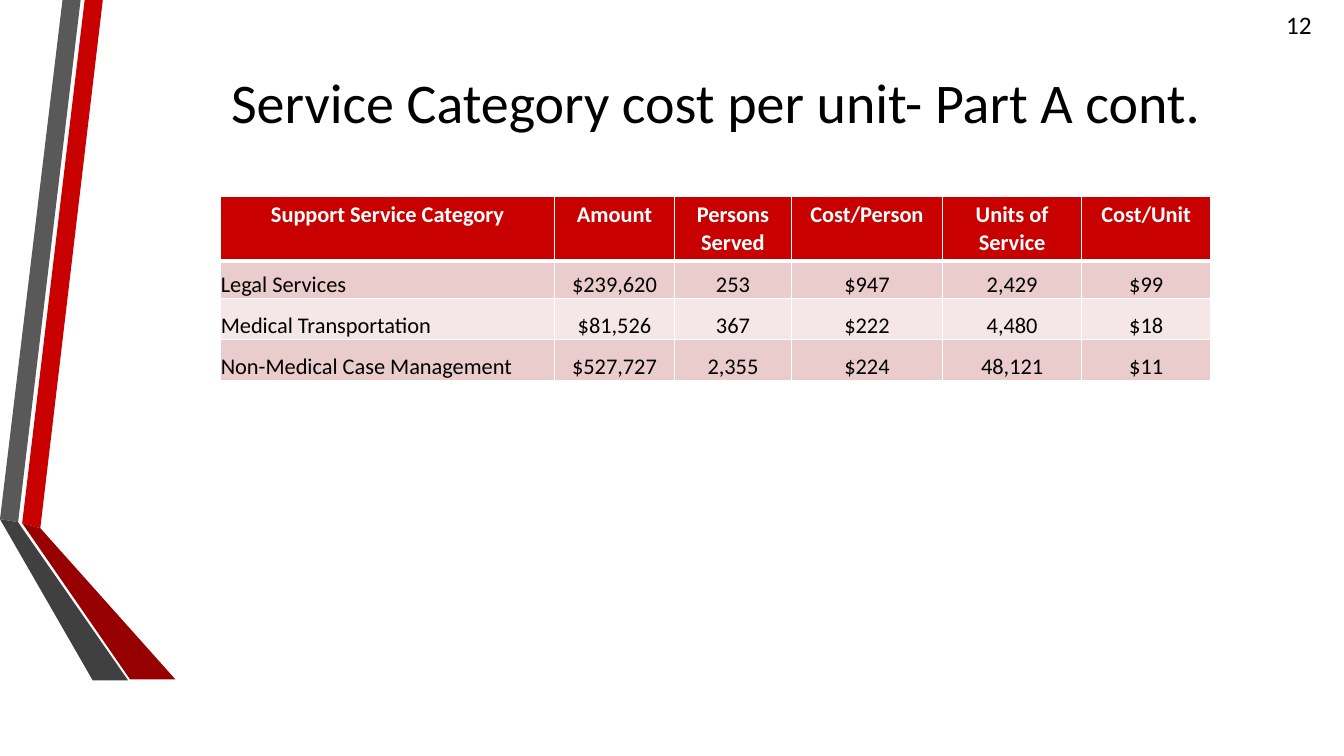
from dataclasses import dataclass

from lxml import etree
from pptx import Presentation
from pptx.dml.color import RGBColor
from pptx.enum.text import MSO_ANCHOR, PP_ALIGN
from pptx.oxml.ns import qn
from pptx.util import Emu, Inches, Pt

LEFT, CENTER = PP_ALIGN.LEFT, PP_ALIGN.CENTER
TOP, MIDDLE, BOTTOM = MSO_ANCHOR.TOP, MSO_ANCHOR.MIDDLE, MSO_ANCHOR.BOTTOM

WIDTH, HEIGHT = Inches(13.33), Inches(7.5)
FONT = "Calibri"
BLACK, WHITE, RED = "000000", "FFFFFF", "C80000"
BANDS = ("EBCCCC", "F5E7E7")


@dataclass(frozen=True)
class Ribbon:
    """A coloured outline; points are percentages of the slide's size."""
    color: str
    points: tuple[tuple[float, float], ...]


@dataclass(frozen=True)
class Column:
    """A table column; width is a percentage of the slide's width."""
    heading: str
    width: float
    values: tuple[str, ...]
    align: PP_ALIGN = CENTER


RIBBONS = (
    Ribbon(RED, ((1.65, 69.2), (3, 69.87), (7.65, 0), (6.3, 0))),
    Ribbon("595959", ((6, 0), (4.65, 0), (0, 68.67), (1.35, 69.07))),
    Ribbon("960000", ((1.65, 69.2), (9.68, 89.87), (13.05, 89.87), (3, 69.87))),
    Ribbon("404040", ((9.53, 90), (1.65, 69.87), (1.35, 69.07), (0, 68.67), (6.9, 90))),
)

COLUMNS = (
    Column("Support Service Category", 24.83,
           ("Legal Services", "Medical Transportation", "Non-Medical Case Management"), LEFT),
    Column("Amount", 8.93, ("$239,620", "$81,526", "$527,727")),
    Column("Persons Served", 8.7, ("253", "367", "2,355")),
    Column("Cost/Person", 11.25, ("$947", "$222", "$224")),
    Column("Units of Service", 10.35, ("2,429", "4,480", "48,121")),
    Column("Cost/Unit", 9.6, ("$99", "$18", "$11")),
)
ROW_HEIGHTS = (8.53, 4.93, 5.47, 5.47)


def across(percent: float) -> Emu:
    return Emu(round(WIDTH * percent / 100))


def down(percent: float) -> Emu:
    return Emu(round(HEIGHT * percent / 100))


def rgb(color: str) -> RGBColor:
    return RGBColor.from_string(color)


def write(frame, text: str, *, size: float, color: str = BLACK,
          bold: bool = False, align: PP_ALIGN = LEFT) -> None:
    frame.word_wrap = True
    para = frame.paragraphs[0]
    para.alignment = align
    span = para.add_run()
    span.text = text
    span.font.name = FONT
    span.font.size = Pt(size)
    span.font.bold = bold
    span.font.color.rgb = rgb(color)


def add_ribbon(page, ribbon: Ribbon) -> None:
    corners = [(across(x), down(y)) for x, y in ribbon.points]
    builder = page.shapes.build_freeform(*corners[0], scale=1.0)
    builder.add_line_segments(corners[1:], close=True)
    shape = builder.convert_to_shape()
    shape.shadow.inherit = False
    shape.fill.solid()
    shape.fill.fore_color.rgb = rgb(ribbon.color)
    shape.line.fill.background()


def add_text(page, text: str, left: float, top: float, width: float, height: float, *,
             anchor: MSO_ANCHOR = TOP, **style) -> None:
    box = page.shapes.add_textbox(across(left), down(top), across(width), down(height))
    box.text_frame.vertical_anchor = anchor
    write(box.text_frame, text, **style)


def set_borders(cell, **widths: float) -> None:
    """Draw white borders; they must precede the fill in the cell's XML."""
    properties = cell._tc.get_or_add_tcPr()
    for index, side in enumerate("LRTB"):
        line = etree.Element(qn(f"a:ln{side}"), w=str(Pt(widths.get(side, 1))))
        fill = etree.SubElement(line, qn("a:solidFill"))
        etree.SubElement(fill, qn("a:srgbClr"), val=WHITE)
        properties.insert(index, line)


def fill_cell(cell, color: str) -> None:
    cell.fill.solid()
    cell.fill.fore_color.rgb = rgb(color)


def add_cost_table(page, left: float, top: float) -> None:
    frame = page.shapes.add_table(
        len(ROW_HEIGHTS), len(COLUMNS), across(left), down(top),
        across(sum(column.width for column in COLUMNS)), down(sum(ROW_HEIGHTS)))
    table = frame.table
    for row, height in zip(table.rows, ROW_HEIGHTS):
        row.height = down(height)

    for number, column in enumerate(COLUMNS):
        table.columns[number].width = across(column.width)

        # Heading
        cell = table.cell(0, number)
        fill_cell(cell, RED)
        set_borders(cell, B=3)
        write(cell.text_frame, column.heading, size=16, color=WHITE, bold=True, align=CENTER)

        # Banded values
        for line, value in enumerate(column.values, start=1):
            cell = table.cell(line, number)
            fill_cell(cell, BANDS[(line - 1) % len(BANDS)])
            set_borders(cell, T=3 if line == 1 else 1)
            cell.margin_left = cell.margin_right = cell.margin_top = cell.margin_bottom = 0
            cell.vertical_anchor = BOTTOM
            write(cell.text_frame, value, size=16, align=column.align)


def main() -> None:
    deck = Presentation()
    deck.slide_width, deck.slide_height = WIDTH, HEIGHT
    page = deck.slides.add_slide(deck.slide_layouts[6])

    # Ribbons along the left edge
    for ribbon in RIBBONS:
        add_ribbon(page, ribbon)

    # Page number and title
    add_text(page, "12", 94.95, 0.53, 5.03, 5.33, size=18)
    add_text(page, "Service Category cost per unit- Part A cont.", 12.15, 0.53, 82.2, 25.6,
             anchor=MIDDLE, size=40, align=CENTER)

    # Cost table
    add_cost_table(page, 16.43, 26)

    deck.save("out.pptx")


if __name__ == "__main__":
    main()
